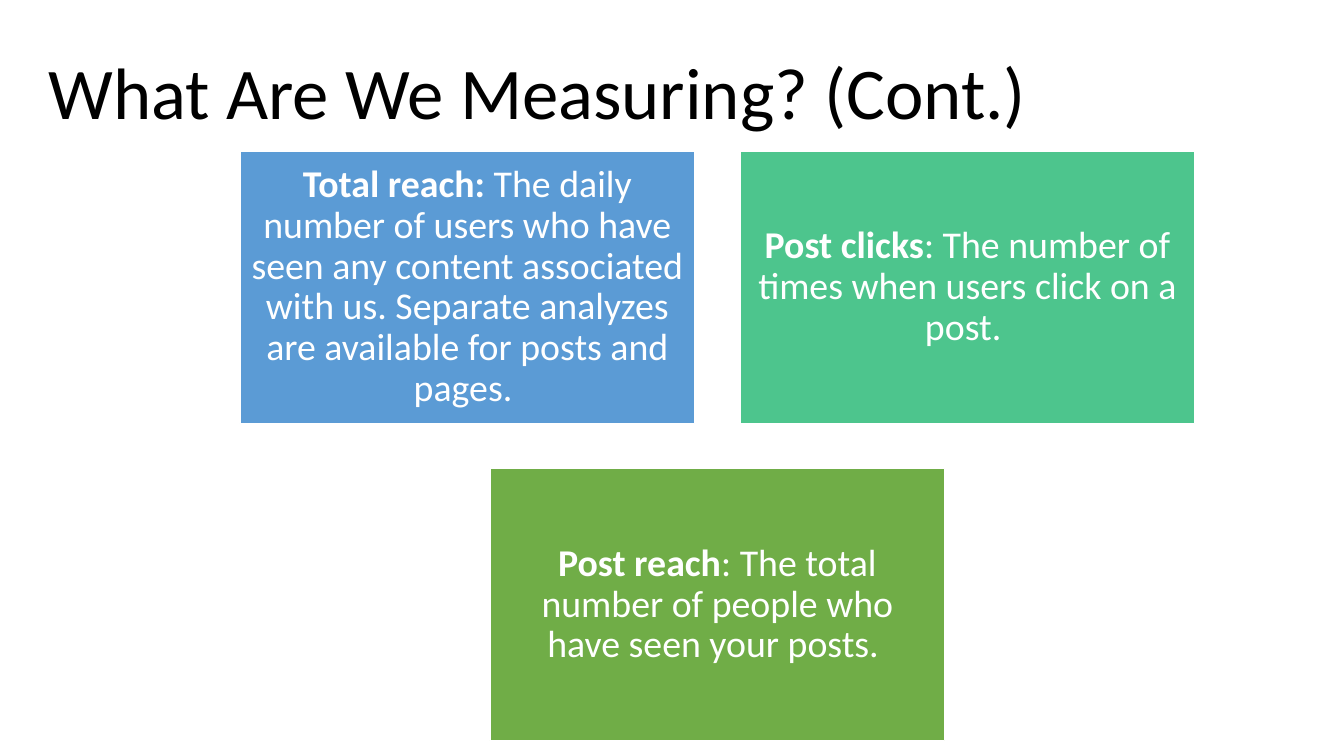
from pptx import Presentation
from pptx.dml.color import RGBColor
from pptx.enum.shapes import MSO_SHAPE
from pptx.enum.text import MSO_ANCHOR, MSO_AUTO_SIZE, PP_ALIGN
from pptx.util import Inches, Pt

BLACK = RGBColor(0x00, 0x00, 0x00)
WHITE = RGBColor(0xFF, 0xFF, 0xFF)
BLUE = RGBColor(0x5B, 0x9B, 0xD5)
TEAL = RGBColor(0x4D, 0xC5, 0x8D)
GREEN = RGBColor(0x70, 0xAD, 0x47)

FONT = "Calibri"
COLUMNS = 2
CARD_WIDTH, CARD_HEIGHT = Inches(4.51), Inches(2.7)
GAP = Inches(0.45)
CARD_MARGIN = Inches(0.11)

# Term, definition, fill; each definition closes with a no-break space
METRICS = [
    ("Total reach:", " The daily number of users who have seen any content "
     "associated with us. Separate analyzes are available for posts and pages. ", BLUE),
    ("Post clicks", ": The number of times when users click on a post. ", TEAL),
    ("Post reach", ": The total number of people who have seen your posts. ", GREEN),
]


def format_paragraph(paragraph, size, color, alignment):
    paragraph.alignment = alignment
    paragraph.line_spacing = 0.9
    paragraph.font.name = FONT
    paragraph.font.size = Pt(size)
    paragraph.font.color.rgb = color


def add_title(slide, left, top, width, height):
    title = slide.shapes.title
    title.left, title.top, title.width, title.height = left, top, width, height
    frame = title.text_frame
    frame.text = "What Are We Measuring? (Cont.)"
    frame.auto_size = MSO_AUTO_SIZE.NONE
    frame.vertical_anchor = MSO_ANCHOR.MIDDLE
    format_paragraph(frame.paragraphs[0], 52, BLACK, PP_ALIGN.LEFT)


def add_card(slide, left, top, term, definition, color):
    card = slide.shapes.add_shape(MSO_SHAPE.RECTANGLE, left, top, CARD_WIDTH, CARD_HEIGHT)
    card.shadow.inherit = False
    card.fill.solid()
    card.fill.fore_color.rgb = color
    card.line.color.rgb = WHITE
    card.line.width = Pt(1)

    frame = card.text_frame
    frame.word_wrap = True
    frame.vertical_anchor = MSO_ANCHOR.MIDDLE
    frame.margin_left = frame.margin_right = CARD_MARGIN
    frame.margin_top = frame.margin_bottom = CARD_MARGIN
    paragraph = frame.paragraphs[0]
    format_paragraph(paragraph, 27, WHITE, PP_ALIGN.CENTER)
    term_run = paragraph.add_run()
    term_run.text = term
    term_run.font.bold = True
    paragraph.add_run().text = definition


def add_metric_cards(slide, left, top, width):
    """Fill rows of cards, centring each row in the given width."""
    for row, start in enumerate(range(0, len(METRICS), COLUMNS)):
        metrics = METRICS[start:start + COLUMNS]
        row_width = len(metrics) * (CARD_WIDTH + GAP) - GAP
        row_left = left + (width - row_width) // 2
        row_top = top + row * (CARD_HEIGHT + GAP)
        for column, metric in enumerate(metrics):
            add_card(slide, row_left + column * (CARD_WIDTH + GAP), row_top, *metric)


def main():
    presentation = Presentation()
    presentation.slide_width = Inches(13.33)
    presentation.slide_height = Inches(7.5)
    slide = presentation.slides.add_slide(presentation.slide_layouts[5])
    add_title(slide, Inches(0.38), Inches(0.4), Inches(11.85), Inches(1.1))
    add_metric_cards(slide, Inches(2.38), Inches(1.5), Inches(9.47))
    presentation.save("out.pptx")


if __name__ == "__main__":
    main()
